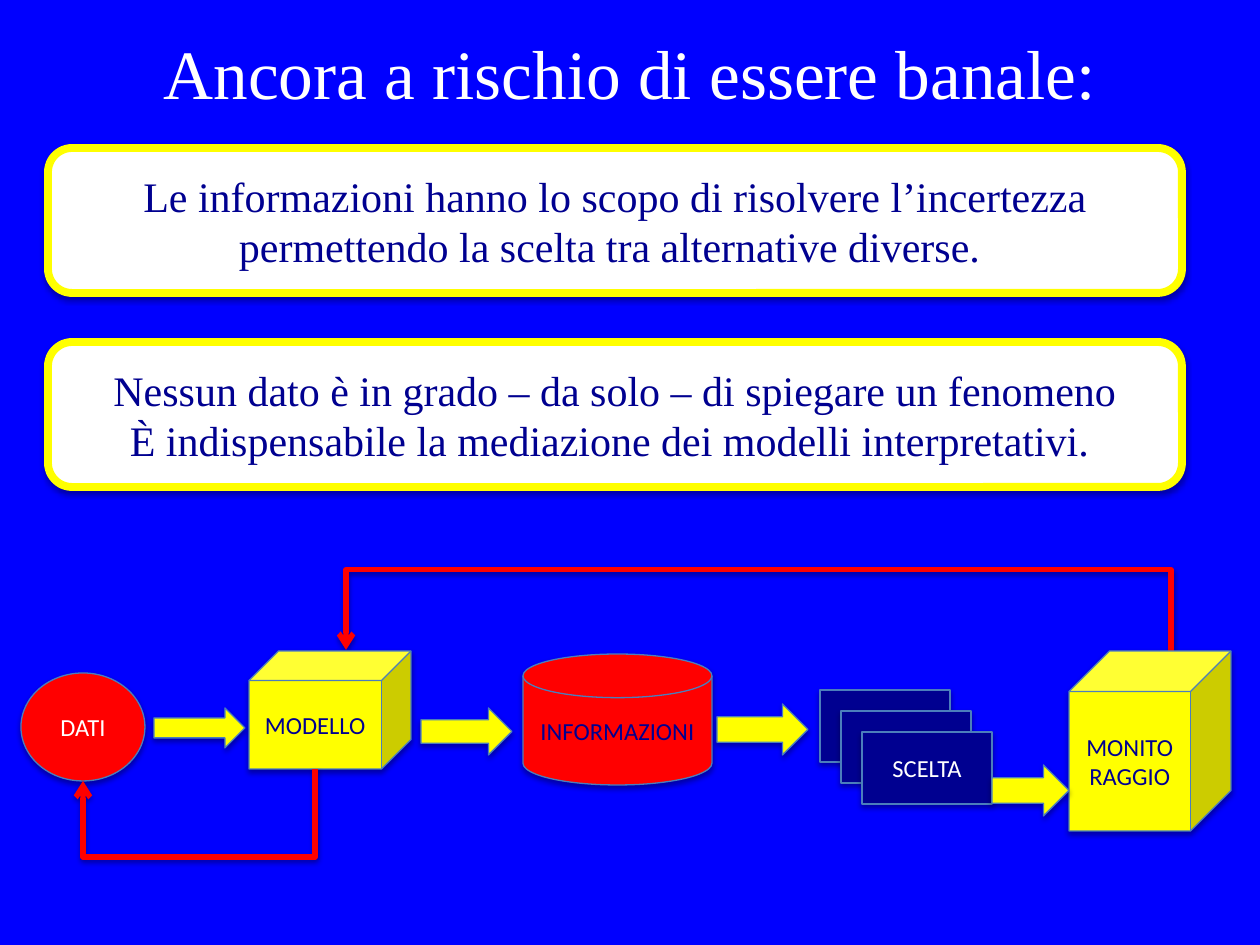
import pptx
import pptx.dml.color
import pptx.enum.shapes
import pptx.enum.text
import pptx.oxml
import pptx.oxml.ns
import pptx.util
from dataclasses import dataclass

SHAPE = pptx.enum.shapes.MSO_SHAPE
EMU_PER_PX = 914400 / 126


@dataclass(frozen=True)
class Theme:
    blue: str = "0000FF"
    navy: str = "000090"
    white: str = "FFFFFF"
    yellow: str = "FFFF00"
    red: str = "FF0000"
    outline: str = "4B7EBC"
    serif: str = "Times New Roman"
    sans: str = "Calibri"
    title_size: float = 39.6
    body_size: int = 24
    label_size: int = 14
    frame_width: float = 4.5
    outline_width: float = 0.75
    feedback_width: int = 3


THEME = Theme()
TITLE = "Ancora a rischio di essere banale:"
TITLE_BOX = (63, 38, 1134, 67)

STATEMENTS = [
    ["Le informazioni hanno lo scopo di risolvere l’incertezza permettendo la scelta tra alternative diverse. "],
    ["Nessun dato è in grado – da solo – di spiegare un fenomeno",
     "È indispensabile la mediazione dei modelli interpretativi. "],
]
STATEMENT_BOX = (48, 148, 1134, 145)
STATEMENT_STEP = 194

# Process steps: shape, box, fill, label, label colour
STEPS = [
    (SHAPE.OVAL, (21, 673, 124, 108), THEME.red, "DATI", THEME.white),
    (SHAPE.CUBE, (249, 651, 162, 118), THEME.yellow, "MODELLO", THEME.navy),
    (SHAPE.FLOWCHART_MAGNETIC_DISK, (523, 654, 189, 131), THEME.red, "INFORMAZIONI", THEME.navy),
    (SHAPE.CUBE, (1069, 651, 162, 180), THEME.yellow, "MONITORAGGIO", THEME.navy),
]
CHOICE_LABELS = ["", "", "SCELTA"]
CHOICE_BOX = (820, 690, 130, 72)
CHOICE_STEP = 21
ARROWS = [(154, 708, 91, 40), (421, 708, 91, 47), (717, 704, 91, 51), (992, 765, 77, 51)]

# Feedback lines: start, end, height of the horizontal run
MONITORING_TO_MODEL = ((1171, 651), (346, 650), 569)
MODEL_TO_DATA = ((315, 769), (83, 781), 857)


def px(*values):
    return [round(value * EMU_PER_PX) for value in values]


def rgb(color):
    return pptx.dml.color.RGBColor.from_string(color)


def add_shadow(shape, distance, opacity):
    effects = pptx.oxml.parse_xml(
        f'<a:effectLst {pptx.oxml.ns.nsdecls("a")}>'
        f'<a:outerShdw blurRad="40000" dist="{distance}" dir="5400000" rotWithShape="0">'
        f'<a:srgbClr val="000000"><a:alpha val="{opacity * 1000}"/></a:srgbClr>'
        '</a:outerShdw></a:effectLst>')
    shape.element.spPr.append(effects)


def write_text(frame, lines, font_name, size, color):
    formats = {"word_wrap": True, "auto_size": pptx.enum.text.MSO_AUTO_SIZE.NONE,
               "vertical_anchor": pptx.enum.text.MSO_ANCHOR.MIDDLE}
    for name, value in formats.items():
        setattr(frame, name, value)
    for index, line in enumerate(lines):
        paragraph = frame.add_paragraph() if index else frame.paragraphs[0]
        paragraph.alignment = pptx.enum.text.PP_ALIGN.CENTER
        run = paragraph.add_run()
        run.text = line
        for name, value in {"name": font_name, "size": pptx.util.Pt(size)}.items():
            setattr(run.font, name, value)
        run.font.color.rgb = rgb(color)


def add_box(slide, kind, box, fill, line=THEME.outline, width=THEME.outline_width):
    shape = slide.shapes.add_shape(kind, *px(*box))
    shape.fill.solid()
    shape.fill.fore_color.rgb = rgb(fill)
    shape.line.color.rgb = rgb(line)
    shape.line.width = pptx.util.Pt(width)
    add_shadow(shape, 23000, 35)
    return shape


def add_step(slide, kind, box, fill, label, color):
    shape = add_box(slide, kind, box, fill)
    if label:
        write_text(shape.text_frame, [label], THEME.sans, THEME.label_size, color)


def add_feedback(slide, start, end, run_y):
    """Elbow arrow that leaves vertically, runs left at run_y and ends vertically."""
    (start_x, start_y), (end_x, end_y) = start, end
    upward = run_y < start_y
    half_width, half_height = abs(end_y - start_y) / 2, abs(end_x - start_x) / 2
    center_x, center_y = (start_x + end_x) / 2, (start_y + end_y) / 2
    # The elbow is laid out sideways, then turned about its centre.
    begin_y, finish_y = center_y - half_height, center_y + half_height
    if upward:
        begin_y, finish_y = finish_y, begin_y
    connector = slide.shapes.add_connector(
        pptx.enum.shapes.MSO_CONNECTOR.ELBOW,
        *px(center_x - half_width, begin_y, center_x + half_width, finish_y))
    properties = connector.element.spPr
    properties.xfrm.set("rot", str((270 if upward else 90) * 60000))
    bend = round((run_y - start_y) / (end_y - start_y) * 100000)
    guides = properties.prstGeom.get_or_add_avLst()
    guides.append(pptx.oxml.parse_xml(
        f'<a:gd {pptx.oxml.ns.nsdecls("a")} name="adj1" fmla="val {bend}"/>'))
    connector.line.color.rgb = rgb(THEME.red)
    connector.line.width = pptx.util.Pt(THEME.feedback_width)
    properties.find(pptx.oxml.ns.qn("a:ln")).append(pptx.oxml.parse_xml(
        f'<a:tailEnd {pptx.oxml.ns.nsdecls("a")} type="arrow"/>'))
    add_shadow(connector, 20000, 38)


def main():
    presentation = pptx.Presentation()
    presentation.slide_width, presentation.slide_height = px(1260, 945)
    slide = presentation.slides.add_slide(presentation.slide_layouts[5])
    slide.background.fill.solid()
    slide.background.fill.fore_color.rgb = rgb(THEME.blue)

    title = slide.shapes.title
    for name, value in zip(("left", "top", "width", "height"), px(*TITLE_BOX)):
        setattr(title, name, value)
    write_text(title.text_frame, [TITLE], THEME.serif, THEME.title_size, THEME.white)

    left, top, width, height = STATEMENT_BOX
    for index, lines in enumerate(STATEMENTS):
        box = (left, top + index * STATEMENT_STEP, width, height)
        shape = add_box(slide, SHAPE.ROUNDED_RECTANGLE, box,
                        THEME.white, THEME.yellow, THEME.frame_width)
        write_text(shape.text_frame, lines, THEME.serif, THEME.body_size, THEME.navy)

    add_feedback(slide, *MONITORING_TO_MODEL)
    for step in STEPS:
        add_step(slide, *step)
    left, top, width, height = CHOICE_BOX
    for index, label in enumerate(CHOICE_LABELS):
        offset = index * CHOICE_STEP
        add_step(slide, SHAPE.RECTANGLE, (left + offset, top + offset, width, height),
                 THEME.navy, label, THEME.white)
    for box in ARROWS:
        add_box(slide, SHAPE.RIGHT_ARROW, box, THEME.yellow)
    add_feedback(slide, *MODEL_TO_DATA)

    presentation.save("out.pptx")


if __name__ == "__main__":
    main()
